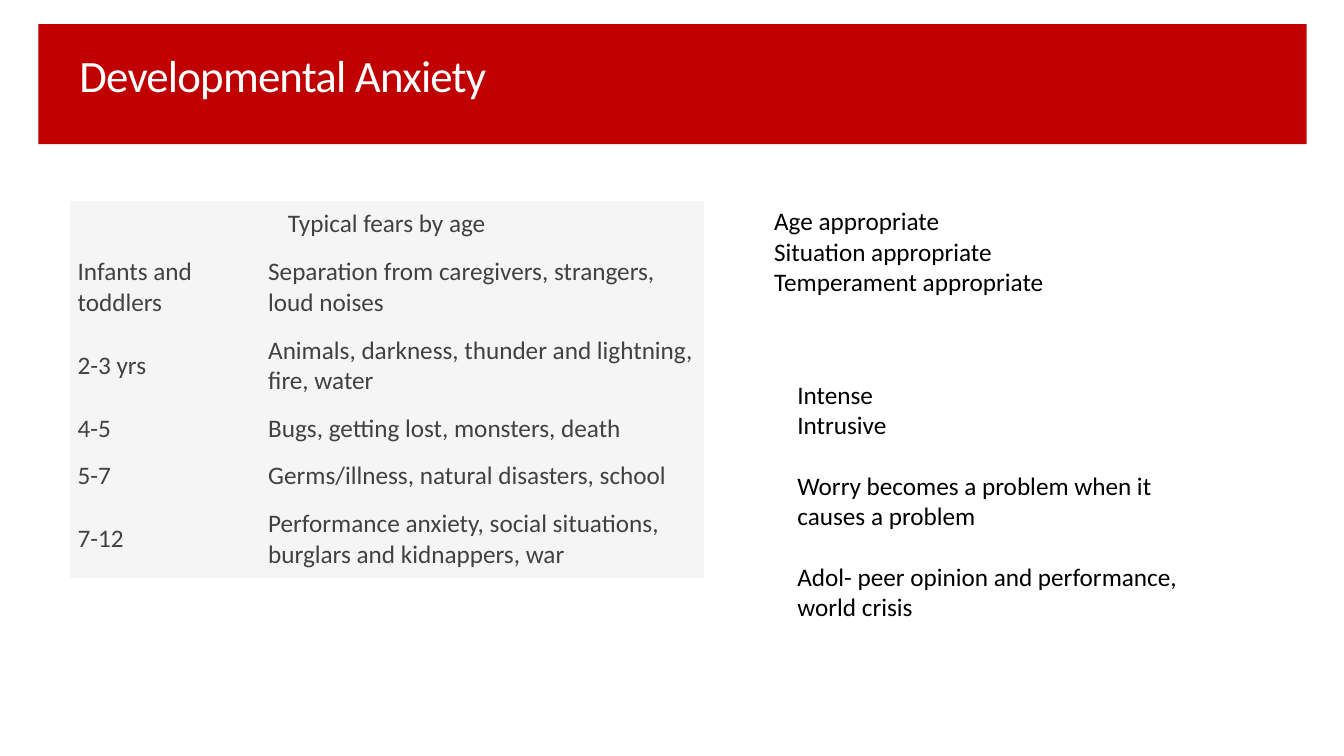
from dataclasses import dataclass

from pptx import Presentation
from pptx.dml.color import RGBColor
from pptx.enum.shapes import MSO_SHAPE
from pptx.enum.text import MSO_ANCHOR, PP_ALIGN
from pptx.oxml.ns import qn
from pptx.util import Inches, Pt


@dataclass(frozen=True)
class Theme:
    font: str = "Calibri"
    banner: RGBColor = RGBColor(0xC0, 0x00, 0x00)
    title: RGBColor = RGBColor(0xFF, 0xFF, 0xFF)
    body: RGBColor = RGBColor(0x00, 0x00, 0x00)
    table_text: RGBColor = RGBColor(0x41, 0x41, 0x41)
    table_fill: RGBColor = RGBColor(0xF5, 0xF5, 0xF5)
    title_size: Pt = Pt(32)
    body_size: Pt = Pt(18)
    group_gap: Pt = Pt(22)


THEME = Theme()
NO_TABLE_STYLE = "{2D5ABB26-0587-4C30-8999-92F81FD0307C}"

TABLE_HEADING = "Typical fears by age"
# Age group, fears, number of text lines in the row
FEARS_BY_AGE = [
    ("Infants and toddlers", "Separation from caregivers, strangers, loud noises", 2),
    ("2-3 yrs", "Animals, darkness, thunder and lightning, fire, water", 2),
    ("4-5", "Bugs, getting lost, monsters, death", 1),
    ("5-7", "Germs/illness, natural disasters, school", 1),
    ("7-12", "Performance anxiety, social situations, burglars and kidnappers, war", 2),
]
ROW_HEIGHTS = {1: Inches(0.47), 2: Inches(0.78)}
COLUMN_WIDTHS = (Inches(1.89), Inches(4.4))

APPROPRIATE = [["Age appropriate", "Situation appropriate", "Temperament appropriate"]]
PROBLEM_SIGNS = [
    ["Intense", "Intrusive"],
    ["Worry becomes a problem when it causes a problem"],
    ["Adol- peer opinion and performance, world crisis"],
]


def style_paragraph(paragraph, color, size=THEME.body_size):
    paragraph.font.name = THEME.font
    paragraph.font.size = size
    paragraph.font.color.rgb = color


def add_banner(slide):
    banner = slide.shapes.add_shape(
        MSO_SHAPE.RECTANGLE, Inches(0.38), Inches(0.24), Inches(12.58), Inches(1.19)
    )
    banner.shadow.inherit = False
    banner.fill.solid()
    banner.fill.fore_color.rgb = THEME.banner
    banner.line.fill.background()


def add_text_frame(slide, left, top, width, height):
    box = slide.shapes.add_textbox(Inches(left), Inches(top), Inches(width), Inches(height))
    box.text_frame.word_wrap = True
    return box.text_frame


def add_title(slide, text):
    frame = add_text_frame(slide, 0.69, 0.28, 11.54, 0.99)
    frame.vertical_anchor = MSO_ANCHOR.MIDDLE
    paragraph = frame.paragraphs[0]
    paragraph.line_spacing = 0.9
    run = paragraph.add_run()
    run.text = text
    run._r.get_or_add_rPr().set("spc", "-60")
    style_paragraph(paragraph, THEME.title, THEME.title_size)


def add_line_groups(slide, left, top, width, height, groups):
    """Write each line as a paragraph, with a gap between groups."""
    frame = add_text_frame(slide, left, top, width, height)
    for group_index, lines in enumerate(groups):
        for line_index, line in enumerate(lines):
            is_first = group_index == line_index == 0
            paragraph = frame.paragraphs[0] if is_first else frame.add_paragraph()
            paragraph.text = line
            if group_index and line_index == 0:
                paragraph.space_before = THEME.group_gap
            style_paragraph(paragraph, THEME.body)


def fill_cell(cell, text, alignment=PP_ALIGN.LEFT):
    cell.fill.solid()
    cell.fill.fore_color.rgb = THEME.table_fill
    cell.vertical_anchor = MSO_ANCHOR.MIDDLE
    cell.margin_left = cell.margin_right = Inches(0.08)
    cell.margin_top = cell.margin_bottom = Inches(0.08)
    cell.text = text
    paragraph = cell.text_frame.paragraphs[0]
    paragraph.alignment = alignment
    style_paragraph(paragraph, THEME.table_text)


def add_fears_table(slide):
    heights = [ROW_HEIGHTS[1]] + [ROW_HEIGHTS[lines] for _, _, lines in FEARS_BY_AGE]
    frame = slide.shapes.add_table(
        len(heights), len(COLUMN_WIDTHS), Inches(0.69), Inches(1.99),
        sum(COLUMN_WIDTHS), sum(heights),
    )
    table = frame.table
    table.first_row = table.horz_banding = False
    table._tbl.tblPr.find(qn("a:tableStyleId")).text = NO_TABLE_STYLE
    for column, width in zip(table.columns, COLUMN_WIDTHS):
        column.width = width
    for row, height in zip(table.rows, heights):
        row.height = height

    heading = table.cell(0, 0)
    heading.merge(table.cell(0, 1))
    fill_cell(heading, TABLE_HEADING, PP_ALIGN.CENTER)
    for row_index, (age, fears, _) in enumerate(FEARS_BY_AGE, start=1):
        fill_cell(table.cell(row_index, 0), age)
        fill_cell(table.cell(row_index, 1), fears)


def main():
    presentation = Presentation()
    presentation.slide_width = Inches(13.33)
    presentation.slide_height = Inches(7.5)
    slide = presentation.slides.add_slide(presentation.slide_layouts[6])

    add_banner(slide)
    add_title(slide, "Developmental Anxiety")
    add_fears_table(slide)
    add_line_groups(slide, 7.58, 1.99, 4.32, 1.01, APPROPRIATE)
    add_line_groups(slide, 7.81, 3.71, 4.42, 3.13, PROBLEM_SIGNS)

    presentation.save("out.pptx")


if __name__ == "__main__":
    main()
